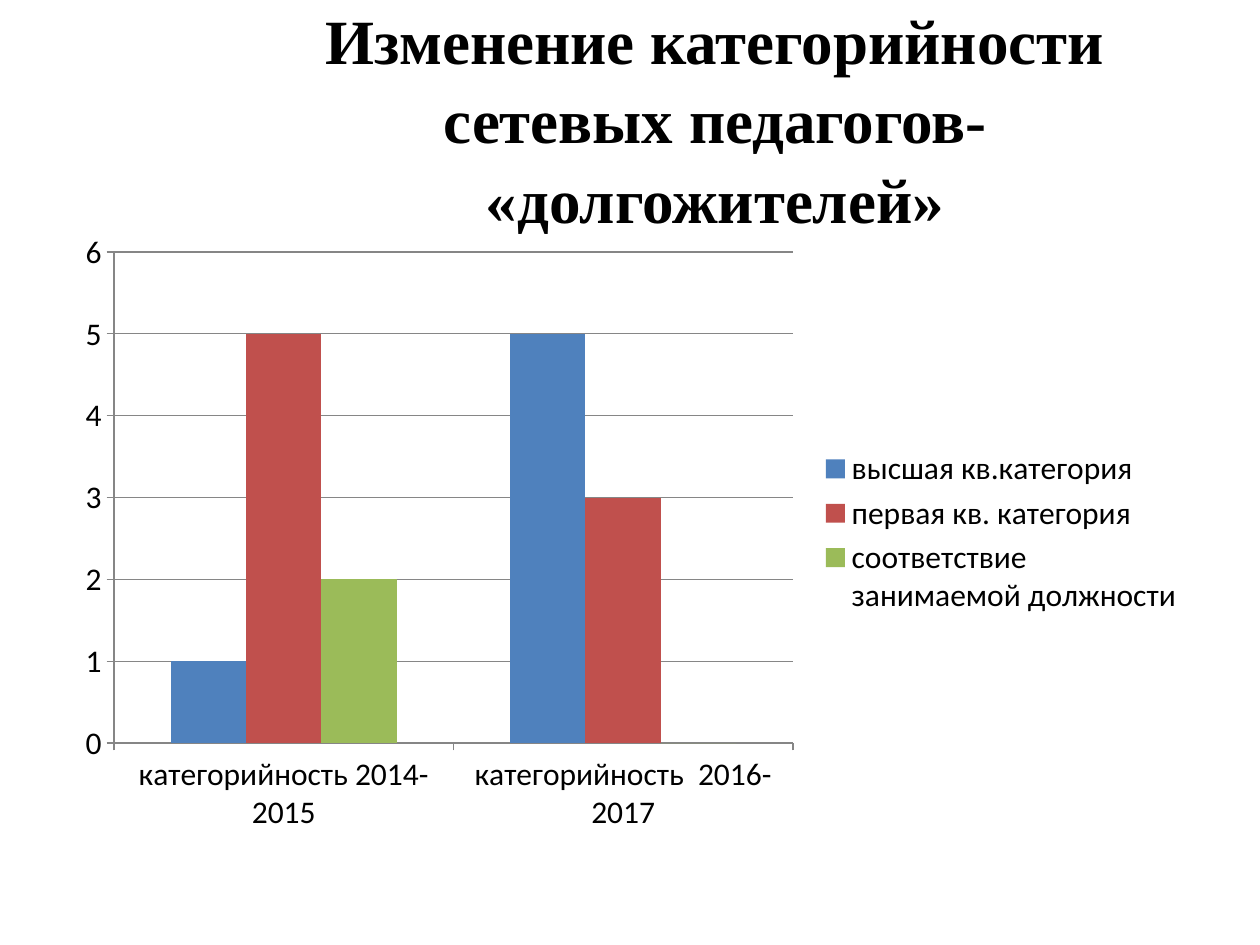
from typing import NamedTuple

from pptx import Presentation
from pptx.chart.data import CategoryChartData as ChartData
from pptx.dml.color import RGBColor
from pptx.enum.chart import XL_CHART_TYPE as Kind, XL_LEGEND_POSITION as Side, XL_TICK_MARK as Tick
from pptx.enum.text import MSO_ANCHOR as Anchor, PP_ALIGN as Align
from pptx.util import Inches, Pt

BLACK = RGBColor(0, 0, 0)
GRAY = RGBColor(0x86, 0x86, 0x86)
BLUE = RGBColor(0x4F, 0x81, 0xBD)
RED = RGBColor(0xC0, 0x50, 0x4D)
GREEN = RGBColor(0x9B, 0xBB, 0x59)


class Box(NamedTuple):
    left: float
    top: float
    width: float
    height: float

    def lengths(self) -> list:
        return [Inches(side) for side in self]


class Series(NamedTuple):
    name: str
    values: tuple[int, ...]
    color: RGBColor


YEARS = ("категорийность 2014-2015", "категорийность  2016-2017")
GRADES = (
    Series("высшая кв.категория", (1, 5), BLUE),
    Series("первая кв. категория", (5, 3), RED),
    Series("соответствие занимаемой должности", (2, 0), GREEN),
)


def style(font, *, name: str, size: float, color: RGBColor, bold: bool = False) -> None:
    font.name, font.size, font.bold = name, Pt(size), bold
    font.color.rgb = color


def add_text(slide, box: Box, text: str, *, spacing: float = 1, **look) -> None:
    frame = slide.shapes.add_textbox(*box.lengths()).text_frame
    frame.word_wrap = True
    frame.vertical_anchor = Anchor.MIDDLE
    para = frame.paragraphs[0]
    para.alignment = Align.CENTER
    para.line_spacing = spacing
    run = para.add_run()
    run.text = text
    style(run.font, **look)


def add_bars(slide, box: Box, years: tuple[str, ...], grades: tuple[Series, ...]) -> None:
    data = ChartData()
    data.categories = years
    for grade in grades:
        data.add_series(grade.name, grade.values)
    chart = slide.shapes.add_chart(Kind.COLUMN_CLUSTERED, *box.lengths(), data).chart
    style(chart.font, name="Calibri", size=18, color=BLACK)
    chart.has_title = False
    chart.has_legend = True
    chart.legend.position = Side.RIGHT
    chart.legend.include_in_layout = False

    plot = chart.plots[0]
    plot.vary_by_categories = False
    plot.gap_width, plot.overlap = 150, 0
    for series, grade in zip(plot.series, grades):
        series.format.fill.solid()
        series.format.fill.fore_color.rgb = grade.color
        series.invert_if_negative = False

    scale = chart.value_axis
    scale.minimum_scale, scale.maximum_scale, scale.major_unit = 0, 6, 1
    scale.has_major_gridlines = True
    for axis in (chart.category_axis, scale):
        axis.major_tick_mark = Tick.OUTSIDE
        axis.minor_tick_mark = Tick.NONE
    for part in (chart.category_axis, scale, scale.major_gridlines):
        part.format.line.color.rgb = GRAY
        part.format.line.width = Pt(0.75)


def main() -> None:
    """Build the slide on how the teachers' grades changed."""
    deck = Presentation()
    deck.slide_width, deck.slide_height = Inches(10), Inches(7.5)
    slide = deck.slides.add_slide(deck.slide_layouts[6])
    add_text(slide, Box(1.85, 0.3, 7.65, 1.25),
             "Изменение категорийности сетевых педагогов- «долгожителей»",
             name="Times New Roman", size=36, color=BLACK, bold=True, spacing=1.05)
    add_bars(slide, Box(0.5, 1.75, 9, 4.95), YEARS, GRADES)
    deck.save("out.pptx")


if __name__ == "__main__":
    main()
